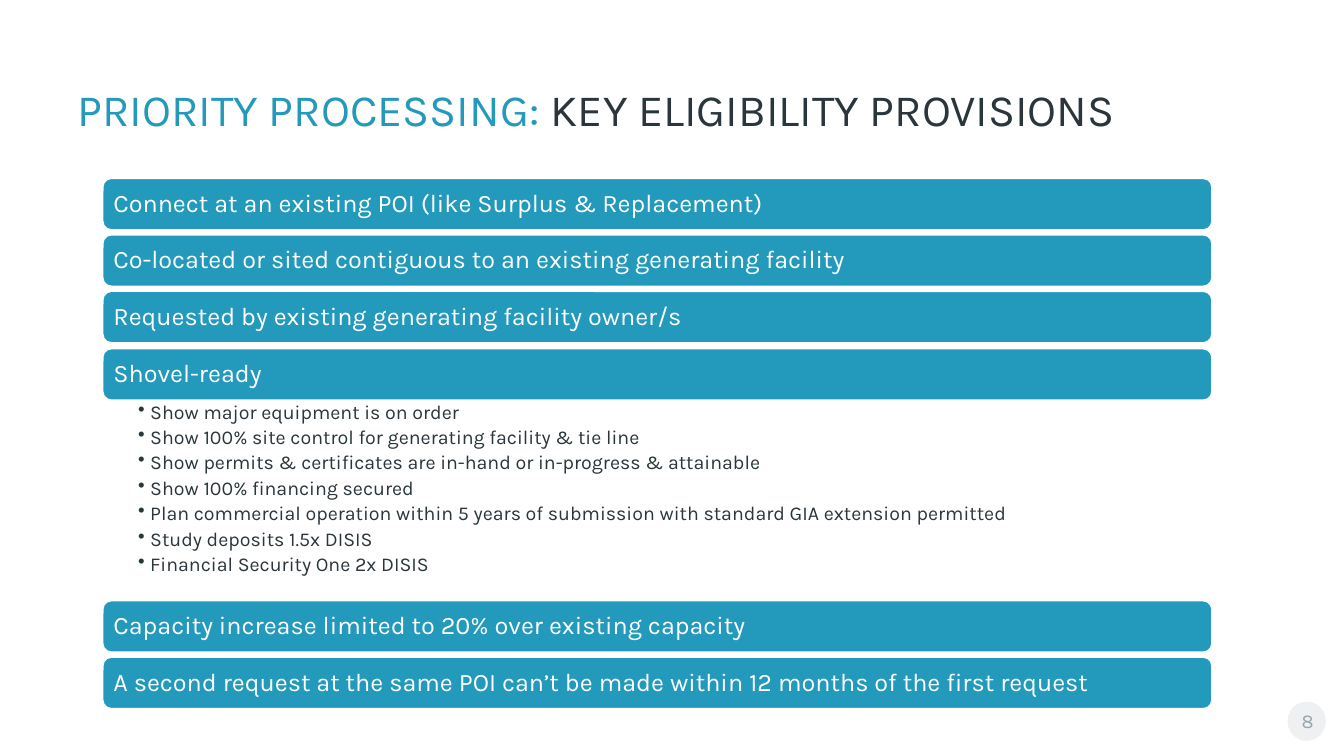
from lxml.etree import SubElement
from pptx import Presentation
from pptx.dml.color import RGBColor
from pptx.enum.shapes import MSO_SHAPE
from pptx.enum.text import MSO_ANCHOR, MSO_AUTO_SIZE, PP_ALIGN
from pptx.oxml.ns import qn
from pptx.util import Pt

PX = 9144  # 100 px to the inch
TEAL = RGBColor(0x23, 0x99, 0xBB)
DARK = RGBColor(0x2A, 0x36, 0x3B)
PALE = RGBColor(0xEE, 0xF0, 0xF1)
GRAY = RGBColor(0x99, 0xA4, 0xAD)
WHITE = RGBColor(0xFF, 0xFF, 0xFF)

LEFT, WIDE, HIGH = 102, 1100, 51
TOP = [
    "Connect at an existing POI (like Surplus & Replacement)",
    "Co-located or sited contiguous to an existing generating facility",
    "Requested by existing generating facility owner/s",
    "Shovel-ready",
]
READY = [
    "Show major equipment is on order",
    "Show 100% site control for generating facility & tie line",
    "Show permits & certificates are in-hand or in-progress & attainable",
    "Show 100% financing secured",
    "Plan commercial operation within 5 years of submission with standard GIA extension permitted",
    "Study deposits 1.5x DISIS",
    "Financial Security One 2x DISIS",
]
END = [
    "Capacity increase limited to 20% over existing capacity",
    "A second request at the same POI can’t be made within 12 months of the first request",
]


def px(*sizes):
    return [size * PX for size in sizes]


def write(frame, paras, size, align=PP_ALIGN.LEFT, anchor=MSO_ANCHOR.MIDDLE,
          pads=(10, 5, 10, 5), lead=0.9, after=0, bullet=False):
    """Fill a frame; each paragraph is a list of (text, colour) runs."""
    frame.word_wrap = True
    frame.auto_size = MSO_AUTO_SIZE.NONE
    frame.vertical_anchor = anchor
    (frame.margin_left, frame.margin_top,
     frame.margin_right, frame.margin_bottom) = px(*pads)
    for i, runs in enumerate(paras):
        para = frame.add_paragraph() if i else frame.paragraphs[0]
        if bullet:
            props = para._p.get_or_add_pPr()
            props.set("marL", str(12 * PX))
            props.set("indent", str(-12 * PX))
            SubElement(props, qn("a:buChar")).set("char", "•")
        para.alignment = align
        para.line_spacing = lead
        para.space_after = Pt(after)
        for text, color in runs:
            run = para.add_run()
            run.text = text
            run.font.name = "Karla"
            run.font.size = Pt(size)
            run.font.color.rgb = color


class Deck:
    def __init__(self):
        self.show = Presentation()
        self.show.slide_width, self.show.slide_height = px(1333, 750)
        self.slide = self.show.slides.add_slide(self.show.slide_layouts[5])

    def title(self, box, runs):
        head = self.slide.shapes.title
        head.left, head.top, head.width, head.height = px(*box)
        write(head.text_frame, [runs], 32, lead=0.75)

    def shape(self, kind, box, fill, line=None):
        item = self.slide.shapes.add_shape(kind, *px(*box))
        item.shadow.inherit = False
        item.fill.solid()
        item.fill.fore_color.rgb = fill
        if line is None:
            item.line.fill.background()
        else:
            item.line.color.rgb = line
            item.line.width = Pt(1)
        return item

    def text(self, box, paras, size, **style):
        item = self.slide.shapes.add_textbox(*px(*box))
        write(item.text_frame, paras, size, **style)

    def bars(self, top, labels):
        for i, label in enumerate(labels):
            # Three bars take 169 px
            box = (LEFT, top + 169 * i // 3, WIDE, HIGH)
            bar = self.shape(MSO_SHAPE.ROUNDED_RECTANGLE, box, TEAL, WHITE)
            write(bar.text_frame, [[(label, WHITE)]], 18, pads=(8, 7, 8, 7))


def main():
    deck = Deck()

    # Page number
    deck.shape(MSO_SHAPE.OVAL, (1277, 696, 38, 39), PALE)
    deck.text((1277, 692, 40, 40), [[("8", GRAY)]], 14, lead=1.0,
              align=PP_ALIGN.CENTER, anchor=MSO_ANCHOR.BOTTOM, pads=(3, 5, 3, 5))

    # Title
    deck.title((67, 62, 1197, 103), [("PRIORITY PROCESSING:", TEAL),
                                     (" KEY ELIGIBILITY PROVISIONS", DARK)])

    # Provisions, with the details of the fourth
    deck.bars(177, TOP)
    deck.text((LEFT, 396, WIDE, 200), [[(item, DARK)] for item in READY], 14,
              anchor=MSO_ANCHOR.TOP, pads=(35, 3, 14, 3), after=3, bullet=True)
    deck.bars(596, END)

    deck.show.save("out.pptx")


if __name__ == "__main__":
    main()
